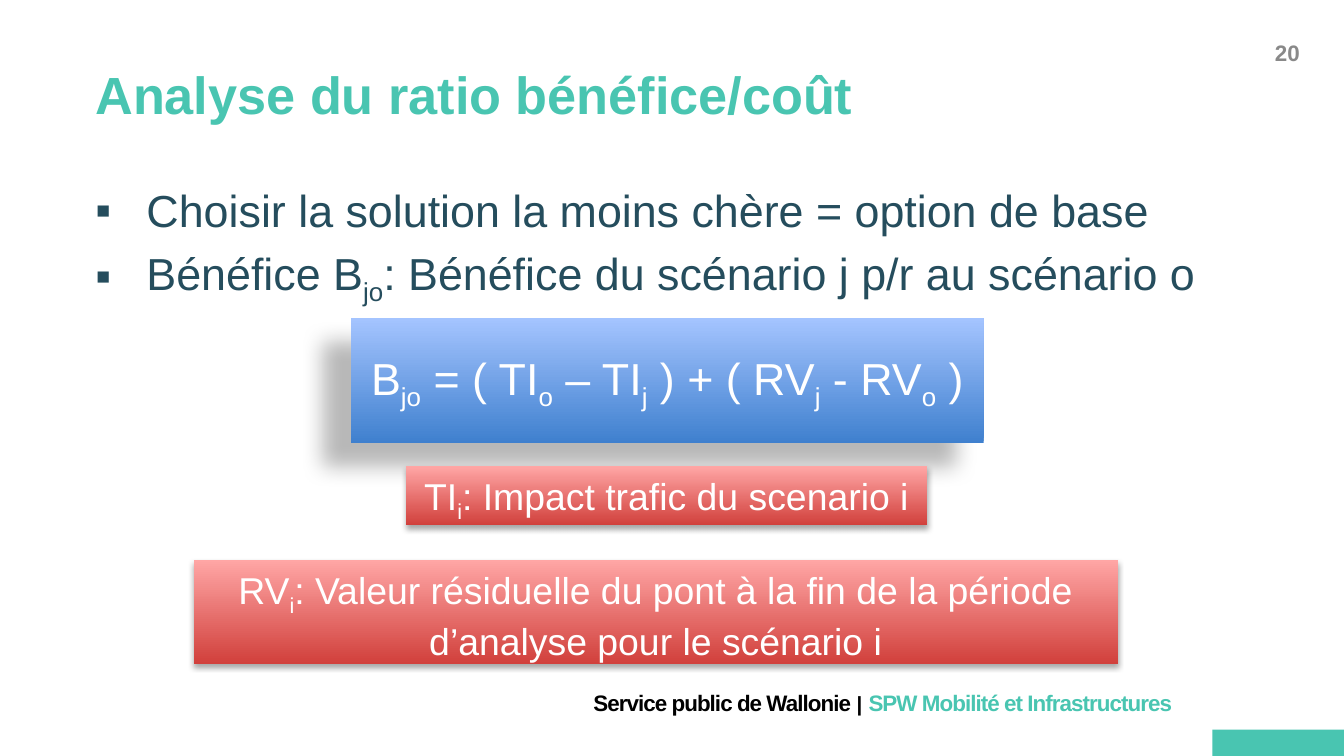
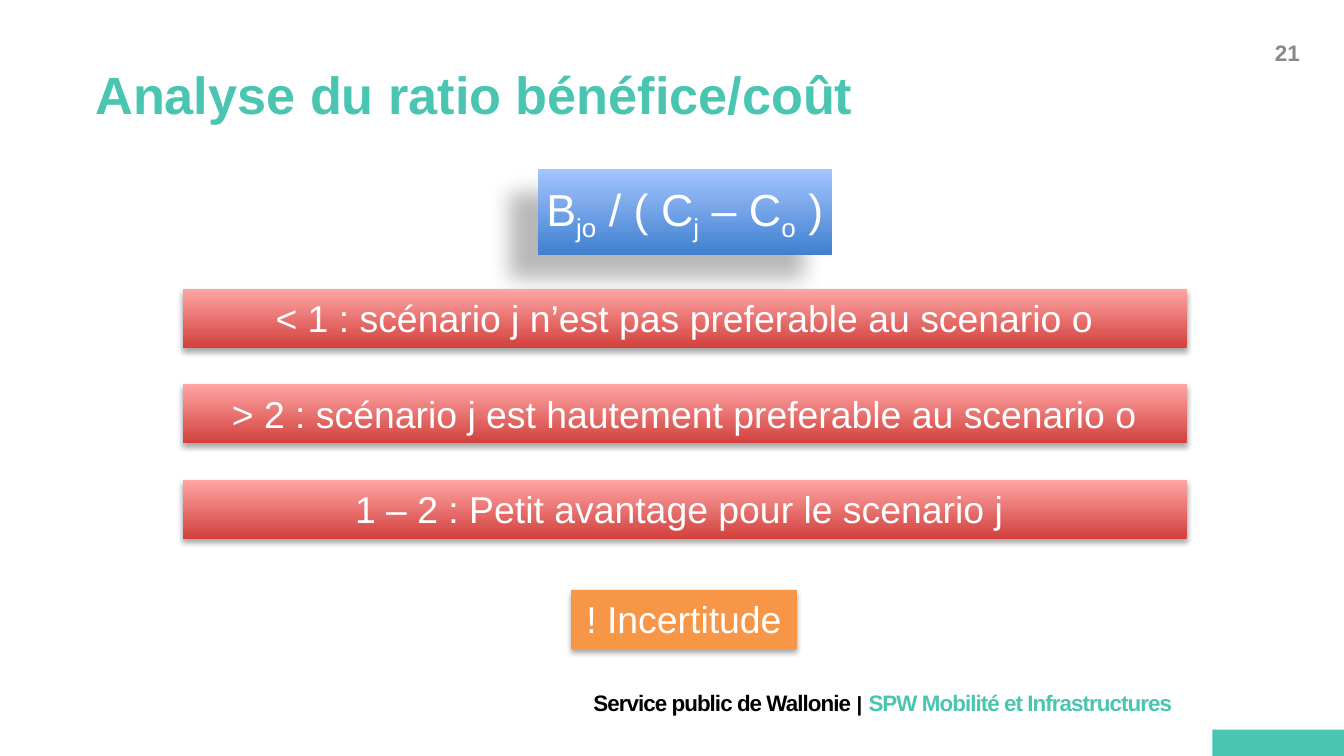
from lxml import etree
from pptx import Presentation
from pptx.dml.color import RGBColor
from pptx.enum.shapes import MSO_SHAPE
from pptx.enum.text import MSO_ANCHOR, MSO_AUTO_SIZE, PP_ALIGN
from pptx.oxml.ns import qn
from pptx.util import Inches, Pt

RECT = MSO_SHAPE.RECTANGLE
MIDDLE, TOP = MSO_ANCHOR.MIDDLE, MSO_ANCHOR.TOP
LEFT, CENTER, RIGHT = PP_ALIGN.LEFT, PP_ALIGN.CENTER, PP_ALIGN.RIGHT
FIXED, GROW = MSO_AUTO_SIZE.NONE, MSO_AUTO_SIZE.SHAPE_TO_FIT_TEXT

FONT = "Arial"
TEAL = RGBColor(0x49, 0xC5, 0xB1)
NAVY = RGBColor(0x25, 0x4D, 0x5D)
GREY = RGBColor(0x89, 0x89, 0x89)
BLACK = RGBColor(0, 0, 0)
WHITE = RGBColor(0xFF, 0xFF, 0xFF)
ORANGE = RGBColor(0xF7, 0x96, 0x46)
BLUES = [RGBColor(0x3F, 0x80, 0xCE), RGBColor(0xA4, 0xC4, 0xFF)]  # bottom, top
REDS = [RGBColor(0xD1, 0x40, 0x3C), RGBColor(0xFF, 0xA6, 0xA5)]

# Shadows: opacity %, blur pt, distance pt, direction in degrees
FAR_SHADOW = (28, 11.8, 19.7, 141)
NEAR_SHADOW = (35, 3.1, 1.8, 90)

# Content: text between bars is subscript
TITLE = "Analyse du ratio bénéfice/coût"
FIRST_NUMBER = 20
FOOTER = [
    ("Service public de Wallonie ", 12, BLACK),
    ("|", 11, BLACK),
    (" ", 12, BLACK),
    ("SPW Mobilité et Infrastructures", 12, TEAL),
]
VERDICTS = [
    "< 1 : scénario j n’est pas preferable au scenario o",
    "> 2 : scénario j est hautement preferable au scenario o",
    "1 – 2 : Petit avantage pour le scenario j ",
]
SLIDES = [
    {
        "bullets": [
            "Choisir la solution la moins chère = option de base",
            "Bénéfice B|jo|: Bénéfice du scénario j p/r au scénario o",
        ],
        "formula": ("B|jo| = ( TI|o| – TI|j| ) + ( RV|j| - RV|o| )",
                    (2.61, 2.37, 4.71, 0.93)),
        "notes": [
            ("TI|i|: Impact trafic du scenario i", (3.02, 3.47, 3.88, 0.44)),
            ("RV|i|: Valeur résiduelle du pont à la fin de la période "
             "d’analyse pour le scénario i", (1.44, 4.17, 6.88, 0.77)),
        ],
    },
    {
        "formula": ("B|jo| / ( C|j| – C|o| )", (4, 1.26, 2.19, 0.64)),
        "notes": [(text, (1.36, 2.15 + 0.71 * i, 7.47, 0.44))
                  for i, text in enumerate(VERDICTS)],
        "warning": ("! Incertitude ", (4.25, 4.39, 1.68, 0.44)),
    },
]


def add_run(p, text, size, color, bold=False):
    r = p.add_run()
    r.text = text
    r.font.name, r.font.size, r.font.bold = FONT, Pt(size), bold
    r.font.color.rgb = color
    return r


def add_marked(p, text, size, color):
    for i, part in enumerate(text.split("|")):
        r = add_run(p, part, size, color)
        if i % 2:
            r.font._element.set("baseline", "-25000")


def setup_frame(sp, align, anchor=TOP, fit=FIXED, wrap=True):
    tf = sp.text_frame
    tf.word_wrap, tf.auto_size, tf.vertical_anchor = wrap, fit, anchor
    p = tf.paragraphs[0]
    p.alignment = align
    return p


def place(sp, box):
    sp.left, sp.top, sp.width, sp.height = map(Inches, box)


def fill_plain(sp, color):
    sp.fill.solid()
    sp.fill.fore_color.rgb = color


def add_box(s, box):
    sp = s.shapes.add_shape(RECT, *map(Inches, box))
    sp.shadow.inherit = False
    sp.line.fill.background()
    return sp


def add_shadow(sp, opacity, blur, dist, angle):
    effects = sp._element.spPr.find(qn("a:effectLst"))
    shadow = etree.SubElement(
        effects, qn("a:outerShdw"), blurRad=str(Pt(blur)), dist=str(Pt(dist)),
        dir=str(angle * 60000), algn="ctr", rotWithShape="0")
    color = etree.SubElement(shadow, qn("a:srgbClr"), val="000000")
    etree.SubElement(color, qn("a:alpha"), val=str(opacity * 1000))


def add_panel(s, text, box, fill, size=20, shadow=NEAR_SHADOW,
              anchor=TOP, fit=GROW, wrap=True):
    sp = add_box(s, box)
    if isinstance(fill, list):
        sp.fill.gradient()
        sp.fill.gradient_angle = 90
        for stop, color in zip(sp.fill.gradient_stops, fill):
            stop.color.rgb = color
    else:
        fill_plain(sp, fill)
    add_shadow(sp, *shadow)
    add_marked(setup_frame(sp, CENTER, anchor, fit, wrap), text, size, WHITE)


def add_frame(s, number):
    # Page number
    sp = s.shapes.add_textbox(*map(Inches, (7.8, 0.24, 1.97, 0.59)))
    add_run(setup_frame(sp, RIGHT), str(number), 12, GREY, True)
    # Corner band
    fill_plain(add_box(s, (9.02, 5.43, 0.98, 0.2)), TEAL)
    # Footer
    sp = s.shapes.add_textbox(*map(Inches, (0, 5.08, 8.82, 0.3)))
    p = setup_frame(sp, RIGHT, MIDDLE, GROW)
    for text, size, color in FOOTER:
        add_run(p, text, size, color, True).font._element.set("spc", "-50")
    # Title
    place(s.shapes.title, (0.61, 0.23, 8.6, 0.94))
    add_run(setup_frame(s.shapes.title, LEFT, MIDDLE), TITLE, 28, TEAL, True)


def add_bullets(s, items):
    body = s.placeholders[1]
    place(body, (0.61, 1.31, 8.6, 3.53))
    p = setup_frame(body, LEFT)
    p.space_before = Pt(0)
    for i, text in enumerate(items):
        if i:
            p = body.text_frame.add_paragraph()
        pPr = p._p.get_or_add_pPr()
        pPr.set("marL", str(Inches(0.38)))
        pPr.set("indent", str(-Inches(0.38)))
        etree.SubElement(pPr, qn("a:buChar"), char="▪")
        add_marked(p, text, 24, NAVY)


def main():
    prs = Presentation()
    prs.slide_width = Inches(10)
    prs.slide_height = prs.slide_width * 9 // 16
    for number, content in enumerate(SLIDES, FIRST_NUMBER):
        layout = 1 if "bullets" in content else 5  # title and content / title only
        s = prs.slides.add_slide(prs.slide_layouts[layout])
        add_frame(s, number)
        if "bullets" in content:
            add_bullets(s, content["bullets"])
        # Formula, then its explanations
        add_panel(s, *content["formula"], BLUES, 24, FAR_SHADOW, MIDDLE, FIXED, False)
        for text, box in content["notes"]:
            add_panel(s, text, box, REDS)
        if "warning" in content:
            add_panel(s, *content["warning"], ORANGE, wrap=False)
    prs.save("out.pptx")


if __name__ == "__main__":
    main()
